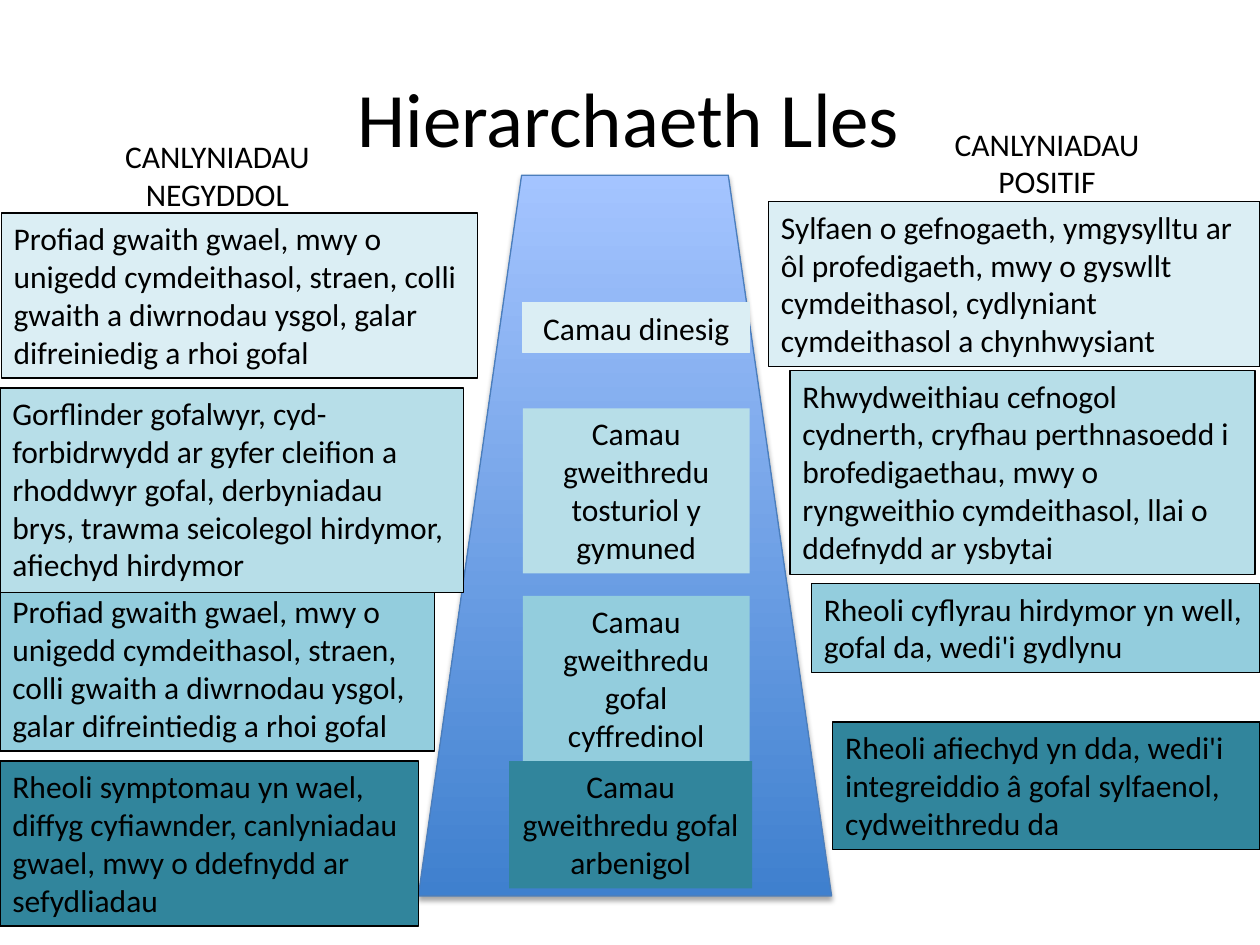
import pptx
import pptx.util
import pptx.dml.color
import pptx.enum.shapes
import pptx.enum.text
import lxml.etree
from dataclasses import dataclass
from pptx.oxml.ns import qn


@dataclass(frozen=True)
class Theme:
    font: str = "Calibri"
    title_size: int = 44
    body_size: int = 18
    line_width: float = 0.75
    ink: str = "000000"
    civic: str = "DBEEF4"
    community: str = "B7DEE8"
    general: str = "93CDDD"
    specialist: str = "31859C"
    tower_bottom: str = "3F80CE"
    tower_top: str = "A4C4FF"
    tower_edge: str = "4B7EBC"


def rgb(value):
    return pptx.dml.color.RGBColor.from_string(value)


class SlideBuilder:
    """Places elements on a grid of 100 columns by 75 rows."""

    COLUMNS, ROWS = 100, 75

    def __init__(self, deck, theme):
        self.theme = theme
        self.page = deck.slides.add_slide(deck.slide_layouts[6])
        self.column = deck.slide_width / self.COLUMNS
        self.row = deck.slide_height / self.ROWS

    def place(self, area):
        left, top, width, height = area
        return (round(left * self.column), round(top * self.row),
                round(width * self.column), round(height * self.row))

    def outline(self, shape, color):
        shape.line.color.rgb = rgb(color)
        shape.line.width = pptx.util.Pt(self.theme.line_width)

    def set_text(self, shape, text, size, centred, grow=True):
        frame = shape.text_frame
        frame.word_wrap = True
        frame.vertical_anchor = pptx.enum.text.MSO_ANCHOR.TOP
        if grow:
            frame.auto_size = pptx.enum.text.MSO_AUTO_SIZE.SHAPE_TO_FIT_TEXT
        para = frame.paragraphs[0]
        para.text = text
        align = pptx.enum.text.PP_ALIGN
        para.alignment = align.CENTER if centred else align.LEFT
        para.font.name = self.theme.font
        para.font.size = pptx.util.Pt(size)
        para.font.color.rgb = rgb(self.theme.ink)

    def title(self, text, area):
        box = self.page.shapes.add_textbox(*self.place(area))
        self.set_text(box, text, self.theme.title_size, centred=True, grow=False)
        box.text_frame.vertical_anchor = pptx.enum.text.MSO_ANCHOR.MIDDLE

    def heading(self, text, area):
        box = self.page.shapes.add_textbox(*self.place(area))
        self.set_text(box, text, self.theme.body_size, centred=True)

    def panel(self, text, area, fill, edge=None, centred=False):
        box = self.page.shapes.add_shape(
            pptx.enum.shapes.MSO_SHAPE.RECTANGLE, *self.place(area))
        box.shadow.inherit = False
        box.fill.solid()
        box.fill.fore_color.rgb = rgb(fill)
        if edge:
            self.outline(box, edge)
        else:
            box.line.fill.background()
        self.set_text(box, text, self.theme.body_size, centred)

    def tower(self, area):
        shape = self.page.shapes.add_shape(
            pptx.enum.shapes.MSO_SHAPE.TRAPEZOID, *self.place(area))
        shape.fill.gradient()
        shape.fill.gradient_angle = 90
        colors = (self.theme.tower_bottom, self.theme.tower_top)
        for position, (stop, color) in enumerate(zip(shape.fill.gradient_stops, colors)):
            stop.position = position
            stop.color.rgb = rgb(color)
        self.outline(shape, self.theme.tower_edge)
        self.drop_shadow(shape)

    def drop_shadow(self, shape):
        shape.shadow.inherit = False
        effects = shape._element.spPr.find(qn("a:effectLst"))
        shadow = lxml.etree.SubElement(
            effects, qn("a:outerShdw"), blurRad=str(pptx.util.Pt(3.1)),
            dist=str(pptx.util.Pt(1.8)), dir="5400000", rotWithShape="0")
        color = lxml.etree.SubElement(shadow, qn("a:srgbClr"), val=self.theme.ink)
        lxml.etree.SubElement(color, qn("a:alpha"), val="35000")


def main():
    deck = pptx.Presentation()
    deck.slide_width = pptx.util.Inches(10)
    deck.slide_height = pptx.util.Inches(7.5)
    theme = Theme()
    slide = SlideBuilder(deck, theme)

    # Title and central tower
    slide.title("Hierarchaeth Lles ", (5.6, 3, 90, 12.5))
    slide.tower((33.2, 13.9, 32.8, 57.2))

    # Actions inside the tower, from the base up
    actions = [
        ("Camau gweithredu gofal arbenigol", (40.4, 60.4, 19.3, 10.1), theme.specialist, None),
        ("Camau gweithredu gofal cyffredinol", (41.5, 47.3, 18, 13.1), theme.general, None),
        ("Camau gweithredu tosturiol y gymuned", (41.5, 32.4, 18, 13.1), theme.community, None),
        ("Camau dinesig", (41.5, 24, 18, 4), theme.civic, theme.civic),
    ]
    for text, area, fill, edge in actions:
        slide.panel(text, area, fill, edge, centred=True)

    # Negative (left) and positive (right) outcomes, from the base up
    outcomes = [
        (theme.specialist,
         "Rheoli symptomau yn wael, diffyg cyfiawnder, canlyniadau gwael, "
         "mwy o ddefnydd ar sefydliadau", (0, 60.4, 33.2, 13.1),
         "Rheoli afiechyd yn dda, wedi'i integreiddio â gofal sylfaenol, "
         "cydweithredu da", (66.1, 57.3, 33.9, 10.1)),
        (theme.general,
         "Profiad gwaith gwael, mwy o unigedd cymdeithasol, straen, colli gwaith "
         "a diwrnodau ysgol, galar difreintiedig a rhoi gofal", (0, 46.5, 34.5, 13.1),
         "Rheoli cyflyrau hirdymor yn well, gofal da, wedi'i gydlynu",
         (64.4, 46.3, 35.6, 7.1)),
        (theme.community,
         "Gorflinder gofalwyr, cyd-forbidrwydd ar gyfer cleifion a rhoddwyr gofal, "
         "derbyniadau brys, trawma seicolegol hirdymor, afiechyd hirdymor",
         (0, 30.8, 36.8, 16.2),
         "Rhwydweithiau cefnogol cydnerth, cryfhau perthnasoedd i brofedigaethau, "
         "mwy o ryngweithio cymdeithasol, llai o ddefnydd ar ysbytai",
         (62.7, 29.4, 36.9, 16.2)),
        (theme.civic,
         "Profiad gwaith gwael, mwy o unigedd cymdeithasol, straen, colli gwaith "
         "a diwrnodau ysgol, galar difreiniedig a rhoi gofal", (0.1, 16.9, 37.8, 13.1),
         "Sylfaen o gefnogaeth, ymgysylltu ar ôl profedigaeth, mwy o gyswllt "
         "cymdeithasol, cydlyniant cymdeithasol a chynhwysiant", (61, 16, 39, 13.1)),
    ]
    for fill, negative, left_area, positive, right_area in outcomes:
        slide.panel(negative, left_area, fill, theme.ink)
        slide.panel(positive, right_area, fill, theme.ink)

    # Column headings
    slide.heading("CANLYNIADAU NEGYDDOL", (4.3, 10.4, 25.9, 7.1))
    slide.heading("CANLYNIADAU POSITIF", (73.7, 9.4, 18.8, 7.1))

    deck.save("out.pptx")


if __name__ == "__main__":
    main()
